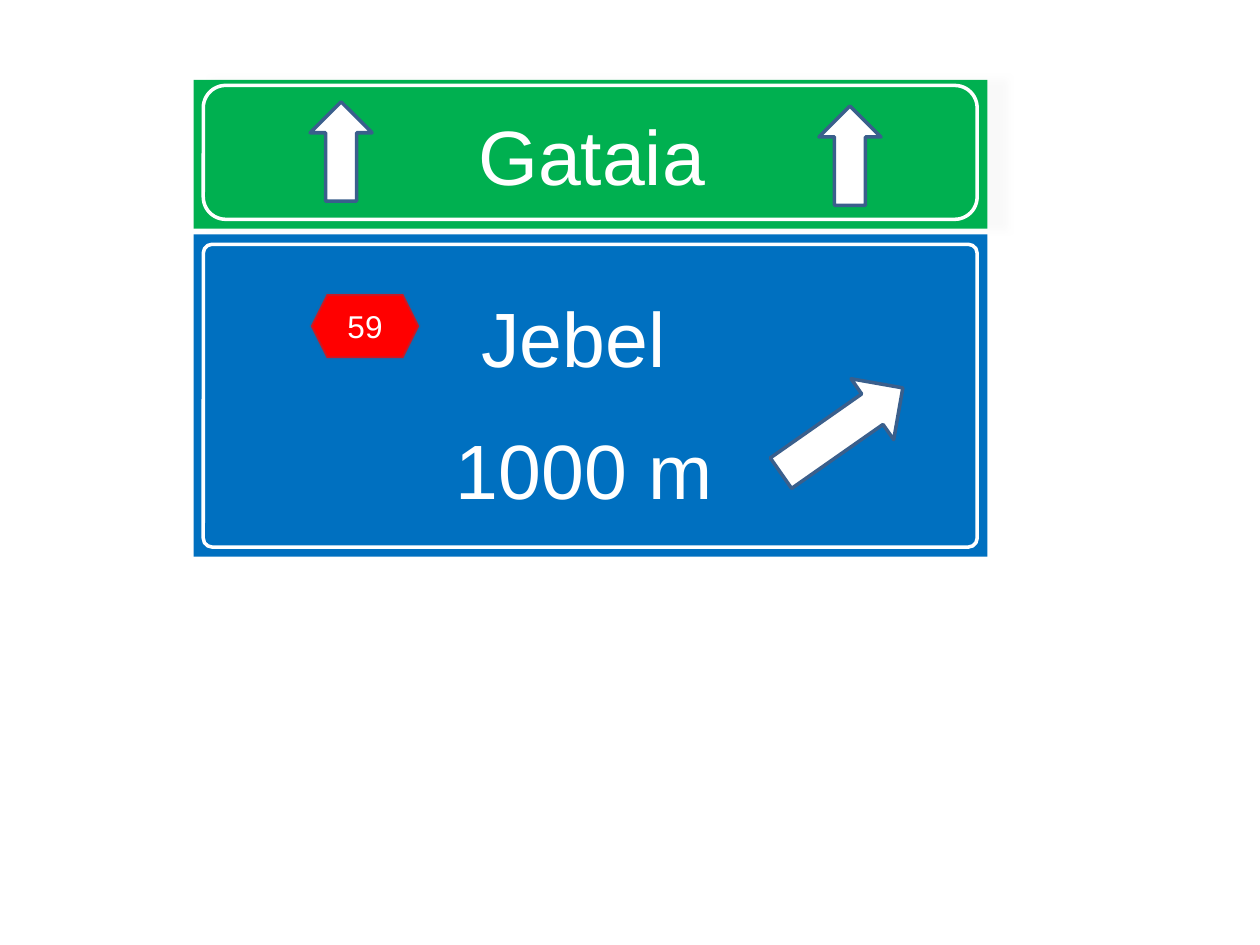
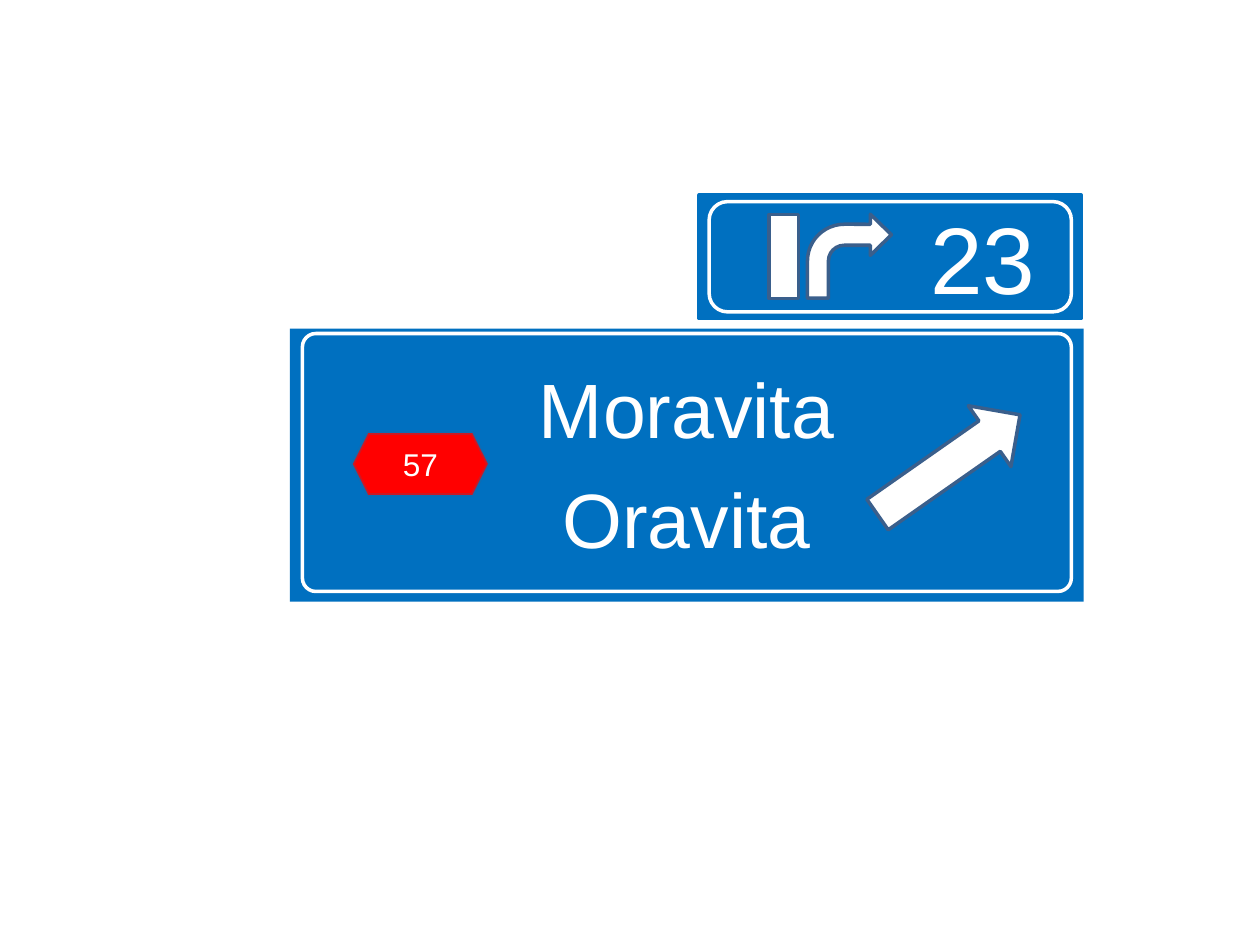
"""Build two slides of motorway direction signs."""
from lxml import etree
from pptx import Presentation
from pptx.dml.color import RGBColor
from pptx.enum import shapes, text
from pptx.oxml import ns
from pptx.util import Pt

GREEN, BLUE, RED, WHITE, OUTLINE = "00B050", "0070C0", "FF0000", "FFFFFF", "3A5F8C"
MIDDLE, TOP = text.MSO_ANCHOR.MIDDLE, text.MSO_ANCHOR.TOP
KIND = shapes.MSO_SHAPE


def add_part(slide, kind, box, fill=None, line=None, adjustments=(), rotation=0):
    part = slide.shapes.add_shape(kind, *[Pt(length) for length in box])
    part.shadow.inherit = False
    part.rotation = rotation
    for index, value in enumerate(adjustments):
        part.adjustments[index] = value
    if fill:
        part.fill.solid()
        part.fill.fore_color.rgb = RGBColor.from_string(fill)
    else:
        part.fill.background()
    if line:
        part.line.color.rgb = RGBColor.from_string(line)
        part.line.width = Pt(2)
    else:
        part.line.fill.background()
    return part


def write(part, words, size, insets=(7.2, 3.6, 7.2, 3.6), anchor=MIDDLE, gap=0):
    frame = part.text_frame
    frame.text = words
    frame.word_wrap = True
    frame.vertical_anchor = anchor
    frame.margin_left, frame.margin_top, frame.margin_right, frame.margin_bottom = map(Pt, insets)
    for index, paragraph in enumerate(frame.paragraphs):
        paragraph.alignment = text.PP_ALIGN.CENTER
        paragraph.space_before = Pt(gap if index else 0)
        font = paragraph.runs[0].font
        font.name, font.size = "Arial", Pt(size)
        font.color.rgb = RGBColor.from_string(WHITE)


prs = Presentation()
prs.slide_width, prs.slide_height = Pt(720), Pt(540)
ahead, turnoff = [prs.slides.add_slide(prs.slide_layouts[6]) for _ in range(2)]

straight_on = add_part(ahead, KIND.RECTANGLE, (110.6, 45.6, 453.6, 85), GREEN)
write(straight_on, "Gataia", 44, (8.6, 3.6, 7.2, 3.6))
effects = straight_on._element.spPr.find(ns.qn("a:effectLst"))
shadow = etree.SubElement(effects, ns.qn("a:outerShdw"), blurRad=str(Pt(4)), dist=str(Pt(11)), dir="0")
shade = etree.SubElement(shadow, ns.qn("a:srgbClr"), val="F2F2F2")
etree.SubElement(shade, ns.qn("a:alpha"), val="40000")

next_exit = add_part(ahead, KIND.RECTANGLE, (110.6, 134, 453.6, 184.2), BLUE)
write(next_exit, "Jebel \n1000 m", 44, (0, 32, 7.2, 17.3), TOP, 22.5)

exit_towns = add_part(turnoff, KIND.RECTANGLE, (165.6, 187.8, 453.6, 156), BLUE)
write(exit_towns, "Moravita\nOravita", 44, (7.2, 18.6, 7.2, 17.3), TOP, 10.5)

exit_number = add_part(turnoff, KIND.ROUNDED_RECTANGLE, (399.6, 111.4, 218.2, 70.6), BLUE, BLUE, [0])
write(exit_number, "23", 54, (113, 3.6, 7.2, 3.6))

for slide, box in ((ahead, (438.6, 224.8, 85, 42.5)), (turnoff, (492.5, 244.3, 99.4, 42.5))):
    add_part(slide, KIND.RIGHT_ARROW, box, WHITE, OUTLINE, rotation=325)

for left, top in ((177.2, 58.2), (468, 60.6)):
    add_part(ahead, KIND.UP_ARROW, (left, top, 35.4, 56.8), WHITE, OUTLINE)

for slide, road, box in ((ahead, "59", (177.6, 168, 62, 36.7)), (turnoff, "57", (201.6, 247.5, 77.2, 35.3))):
    badge = add_part(slide, KIND.HEXAGON, box, RED, OUTLINE)
    edge = badge.line._ln.find(".//" + ns.qn("a:srgbClr"))
    etree.SubElement(edge, ns.qn("a:alpha"), val="25000")
    write(badge, road, 18)

add_part(turnoff, KIND.RECTANGLE, (439.4, 122.6, 17, 48), WHITE, OUTLINE)
add_part(turnoff, KIND.BENT_ARROW, (461.4, 122.4, 48, 48), WHITE, OUTLINE, [0.25, 0.245, 0.25, 0.438])

for slide, box, corner in (
    (ahead, (116.2, 48.8, 442.2, 76.5), 0.167),
    (ahead, (116.2, 139.6, 442.2, 173), 0.029),
    (turnoff, (172.8, 190.6, 439.4, 147.4), 0.052),
    (turnoff, (405.2, 115.2, 207, 63), 0.167),
):
    add_part(slide, KIND.ROUNDED_RECTANGLE, box, line=WHITE, adjustments=[corner])

prs.save("out.pptx")
